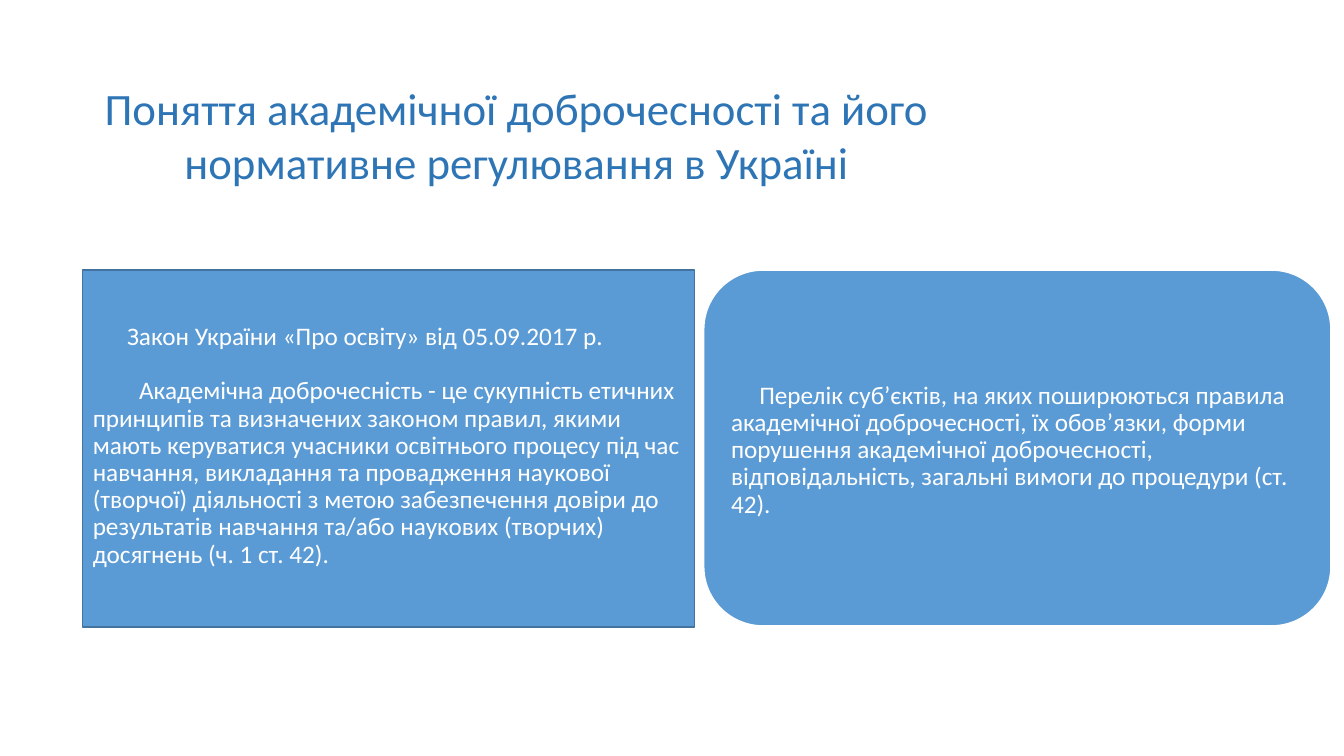
from pptx import Presentation
from pptx.dml.color import RGBColor
from pptx.enum.shapes import MSO_SHAPE
from pptx.enum.text import MSO_ANCHOR, MSO_AUTO_SIZE, PP_ALIGN
from pptx.oxml.ns import qn
from pptx.util import Inches, Pt
from lxml.etree import SubElement

THEME = {
    "font": "Calibri",
    "head": 32,
    "text": 18,
    "blue": RGBColor(0x2E, 0x75, 0xB6),
    "fill": RGBColor(0x5B, 0x9B, 0xD5),
    "edge": RGBColor(0x43, 0x73, 0x9E),
    "white": RGBColor(0xFF, 0xFF, 0xFF),
}


def write(para, text, size="text", color="white", align=PP_ALIGN.LEFT,
          indent=0, before=0, lines=0.9):
    para.text = text
    para.alignment = align
    para.line_spacing = lines
    para.space_before = Pt(before)
    para.space_after = Pt(0)
    props = para._p.get_or_add_pPr()
    props.set("marL", "0")
    props.set("indent", str(Inches(indent)))
    SubElement(props, qn("a:buNone"))
    font = para.font
    font.name = THEME["font"]
    font.size = Pt(THEME[size])
    font.color.rgb = THEME[color]


def place(shape, box, anchor=MSO_ANCHOR.MIDDLE, fill=None, line=None):
    shape.left, shape.top, shape.width, shape.height = map(Inches, box)
    frame = shape.text_frame
    frame.word_wrap = True
    frame.auto_size = MSO_AUTO_SIZE.NONE
    frame.vertical_anchor = anchor
    if fill:
        shape.fill.solid()
        shape.fill.fore_color.rgb = THEME[fill]
        shape.line.color.rgb = THEME[line]
        shape.line.width = Pt(1)
    return frame


deck = Presentation()
deck.slide_width = Inches(13.33)
deck.slide_height = Inches(7.5)
slide = deck.slides.add_slide(deck.slide_layouts[1])

head = place(slide.shapes.title, (0, 0.75, 10.25, 1.18), anchor=MSO_ANCHOR.TOP)
write(head.paragraphs[0],
      "Поняття академічної доброчесності та його нормативне регулювання в Україні",
      size="head", color="blue", align=PP_ALIGN.CENTER, lines=1)

law = place(slide.placeholders[1], (0.82, 2.68, 6.07, 3.54), fill="fill", line="edge")
law.margin_bottom = Inches(0.1)
write(law.paragraphs[0], "Закон України «Про освіту» від 05.09.2017 р.", indent=0.34)
write(law.add_paragraph(),
      "Академічна доброчесність - це сукупність етичних принципів та визначених "
      "законом правил, якими мають керуватися учасники освітнього процесу під час "
      "навчання, викладання та провадження наукової (творчої) діяльності з метою "
      "забезпечення довіри до результатів навчання та/або наукових (творчих) "
      "досягнень (ч. 1 ст. 42).",
      indent=0.46, before=19.5)

card = slide.shapes.add_shape(MSO_SHAPE.ROUNDED_RECTANGLE, 0, 0, 0, 0)
card.shadow.inherit = False
rules = place(card, (6.98, 2.68, 6.22, 3.53), fill="fill", line="white")
rules.margin_top = Inches(0.1)
write(rules.paragraphs[0],
      "Перелік суб’єктів, на яких поширюються правила академічної доброчесності, "
      "їх обов’язки, форми порушення академічної доброчесності, відповідальність, "
      "загальні вимоги до процедури (ст. 42).",
      indent=0.28)

deck.save("out.pptx")
